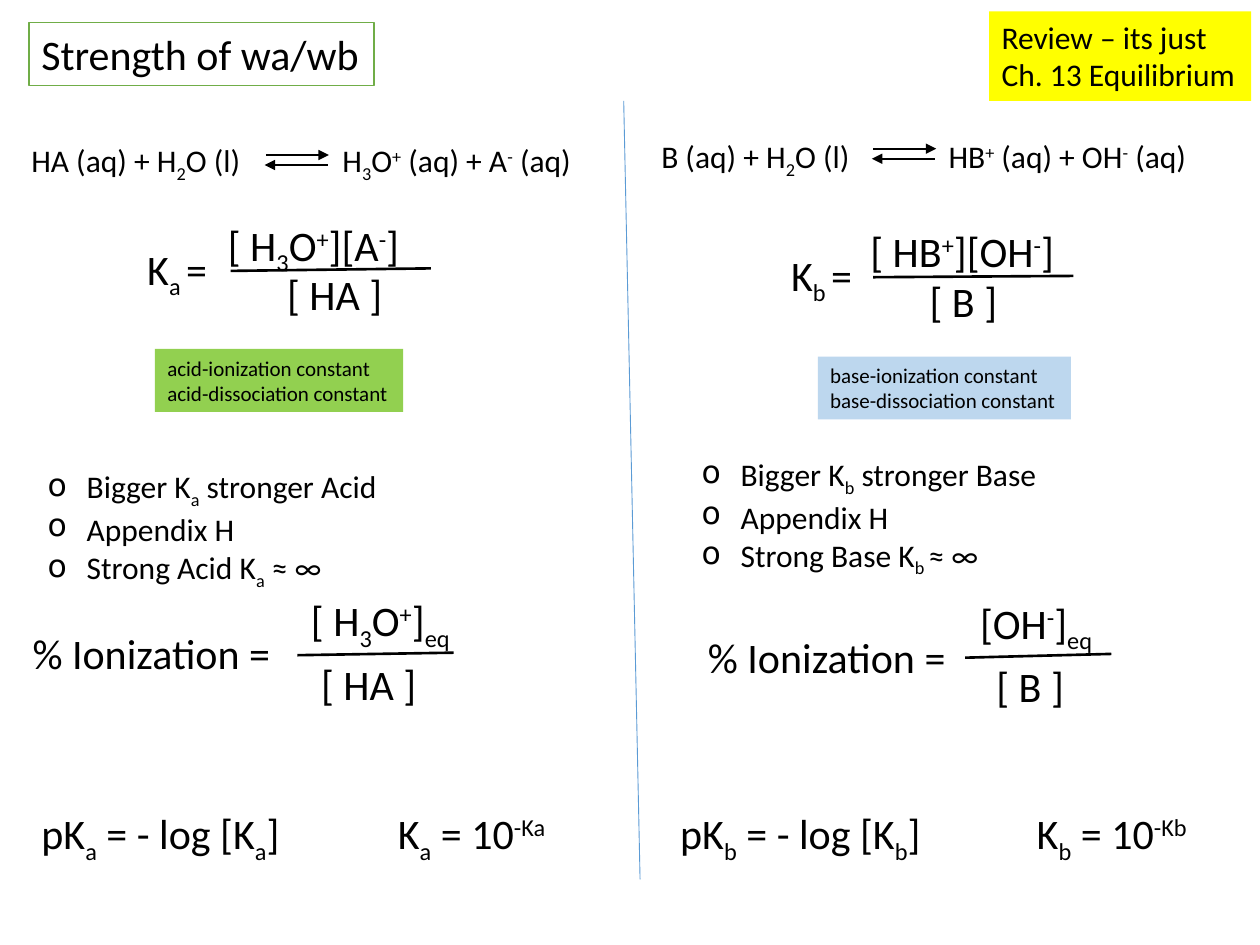
"""Build a slide comparing the strength of weak acids and weak bases."""
from pptx import Presentation
from pptx.dml.color import RGBColor
from pptx.enum.shapes import MSO_CONNECTOR as Connector, MSO_SHAPE as Shape
from pptx.enum.text import MSO_ANCHOR as Anchor, MSO_AUTO_SIZE as AutoSize, PP_ALIGN as Align
from pptx.oxml.ns import qn
from pptx.util import Emu, Pt
from lxml.etree import SubElement

EMU_PER_PX = 9144
FONT = "Calibri"
BLACK = RGBColor(0x00, 0x00, 0x00)
WHITE = RGBColor(0xFF, 0xFF, 0xFF)
GREEN = RGBColor(0x70, 0xAD, 0x47)
LIME = RGBColor(0x92, 0xD0, 0x50)
YELLOW = RGBColor(0xFF, 0xFF, 0x00)
PALE_BLUE = RGBColor(0xBD, 0xD7, 0xEE)
BLUE = RGBColor(0x5B, 0x9B, 0xD5)
BASELINES = {"_": "-25000", "^": "30000"}


def px(*lengths):
    """Turn px lengths into EMU."""
    return [Emu(length * EMU_PER_PX) for length in lengths]


def apply(target, **values):
    """Set each format value on the target."""
    for name, value in values.items():
        setattr(target, name, value)


def add_spans(para, markup, size):
    """Write the parts between bars, where _ lowers and ^ raises a part."""
    for part in markup.split("|"):
        span = para.add_run()
        baseline = BASELINES.get(part[0])
        span.text = part[1:] if baseline else part
        apply(span.font, name=FONT, size=Pt(size))
        span.font.color.rgb = BLACK
        if baseline:
            span._r.get_or_add_rPr().set("baseline", baseline)


def add_bullet(para):
    """Give a paragraph a hanging round bullet."""
    props = para._p.get_or_add_pPr()
    hang = px(31)[0]
    props.set("marL", str(hang))
    props.set("indent", str(-hang))
    SubElement(props, qn("a:buChar")).set("char", "o")


def write(box, lines, size, bullets=False):
    """Fill a box with left-aligned lines of marked-up text."""
    frame = box.text_frame
    apply(frame, word_wrap=False, auto_size=AutoSize.SHAPE_TO_FIT_TEXT,
          vertical_anchor=Anchor.TOP)
    for index, line in enumerate(lines):
        para = frame.add_paragraph() if index else frame.paragraphs[0]
        para.alignment = Align.LEFT
        if bullets:
            add_bullet(para)
        add_spans(para, line, size)


def add_text(shapes, at, *lines, size=24, bullets=False):
    """Add a plain text box."""
    write(shapes.add_textbox(*px(*at)), lines, size, bullets)


def add_panel(shapes, at, lines, size, fill, outline=None):
    """Add a filled rectangle with text."""
    panel = shapes.add_shape(Shape.RECTANGLE, *px(*at))
    panel.shadow.inherit = False
    panel.fill.solid()
    panel.fill.fore_color.rgb = fill
    if outline:
        panel.line.color.rgb = outline
        panel.line.width = Pt(1)
    else:
        panel.line.fill.background()
    write(panel, lines, size)


def add_line(shapes, ends, width, color=BLACK, arrow=False):
    """Add a straight line, with an arrowhead at its end if wanted."""
    line = shapes.add_connector(Connector.STRAIGHT, *px(*ends))
    line.line.color.rgb = color
    line.line.width = Pt(width)
    if arrow:
        SubElement(line.line._get_or_add_ln(), qn("a:tailEnd")).set("type", "triangle")
    SubElement(line._element.spPr, qn("a:effectLst"))


def add_reaction(page, left, right, arrow_at):
    """Add a reaction whose sides are joined by a pair of arrows."""
    shapes = page.shapes.add_group_shape().shapes
    for at, markup in (left, right):
        add_text(shapes, at, markup, size=18)
    x, y = arrow_at
    add_line(shapes, (x, y, x + 50, y), 1, arrow=True)
    add_line(shapes, (x + 49, y + 8, x - 1, y + 8), 1, arrow=True)


def add_fraction(page, parts, bar):
    """Add a name, a numerator and a denominator with a fraction bar."""
    shapes = page.shapes.add_group_shape().shapes
    for at, markup in parts:
        add_text(shapes, at, markup)
    add_line(shapes, bar, 1.5)


def add_constant_names(page, at, kind, fill):
    """Add the two names of an equilibrium constant."""
    names = [f"{kind}-{process} constant" for process in ("ionization", "dissociation")]
    add_panel(page.shapes, at, names, 12, fill)


def add_facts(page, at, kind, last):
    """Add the bulleted facts on a constant."""
    letter = kind[0].lower()
    add_text(page.shapes, at, f"Bigger K|_{letter}| stronger {kind}", "Appendix H",
             f"Strong {kind} K|{last}", size=18, bullets=True)


def add_logs(page, x, gap, widths, letter):
    """Add the logarithm of a constant and its inverse."""
    add_text(page.shapes, (x, 636, widths[0], 50), f"pK|_{letter}| = - log [K|_{letter}|]")
    add_text(page.shapes, (x + gap, 636, widths[1], 50), f"K|_{letter}| = 10|^-K{letter}")


def add_acid_side(page):
    """Add the weak acid column."""
    add_reaction(page, ((15, 107, 195, 40), "HA (aq) + H|_2|O (l)"),
                 ((262, 107, 207, 40), "H|_3|O|^+| (aq) + A|^-| (aq)"), (211, 123))
    add_fraction(page, [((107, 188, 80, 50), "K|_a |="),
                        ((171, 169, 161, 50), "[ H|_3|O|^+|][A|^-|]"),
                        ((218, 208, 96, 50), "[ HA ]")], (183, 215, 342, 213))
    add_constant_names(page, (123, 277, 197, 50), "acid", LIME)
    add_facts(page, (28, 366, 285, 101), "Acid", "_a| ≈ ∞")
    add_fraction(page, [((16, 493, 211, 50), "% Ionization ="),
                        ((237, 467, 137, 50), "[ H|_3|O|^+|]|_eq"),
                        ((245, 518, 96, 50), "[ HA ]")], (236, 520, 360, 518))
    add_logs(page, 23, 283, (212, 143), "a")


def add_base_side(page):
    """Add the weak base column."""
    add_reaction(page, ((515, 104, 178, 40), "B (aq) + H|_2|O (l)"),
                 ((743, 104, 213, 40), "HB|^+| (aq) + OH|^-| (aq)"), (693, 118))
    add_fraction(page, [((618, 193, 81, 50), "K|_b |="),
                        ((681, 174, 170, 50), "[ HB|^+|][OH|^-|]"),
                        ((728, 214, 74, 50), "[ B ]")], (693, 220, 852, 219))
    add_constant_names(page, (649, 283, 201, 50), "base", PALE_BLUE)
    add_facts(page, (547, 356, 290, 101), "Base", "_b |≈ ∞")
    add_fraction(page, [((552, 496, 211, 50), "% Ionization ="),
                        ((768, 469, 114, 50), "[OH|^-|]|_eq"),
                        ((781, 519, 74, 50), "[ B ]")], (766, 522, 882, 519))
    add_logs(page, 530, 283, (216, 146), "b")


def main():
    """Build and save the deck."""
    deck = Presentation()
    deck.slide_width, deck.slide_height = px(1000, 750)
    page = deck.slides.add_slide(deck.slide_layouts[6])
    add_panel(page.shapes, (23, 18, 274, 50), ["Strength of wa/wb"], 24, WHITE, GREEN)
    add_panel(page.shapes, (785, 9, 208, 71),
              ["Review – its just", "Ch. 13 Equilibrium"], 18, YELLOW)
    add_line(page.shapes, (495, 80, 508, 698), 0.5, BLUE)
    add_acid_side(page)
    add_base_side(page)
    deck.save("out.pptx")


if __name__ == "__main__":
    main()
